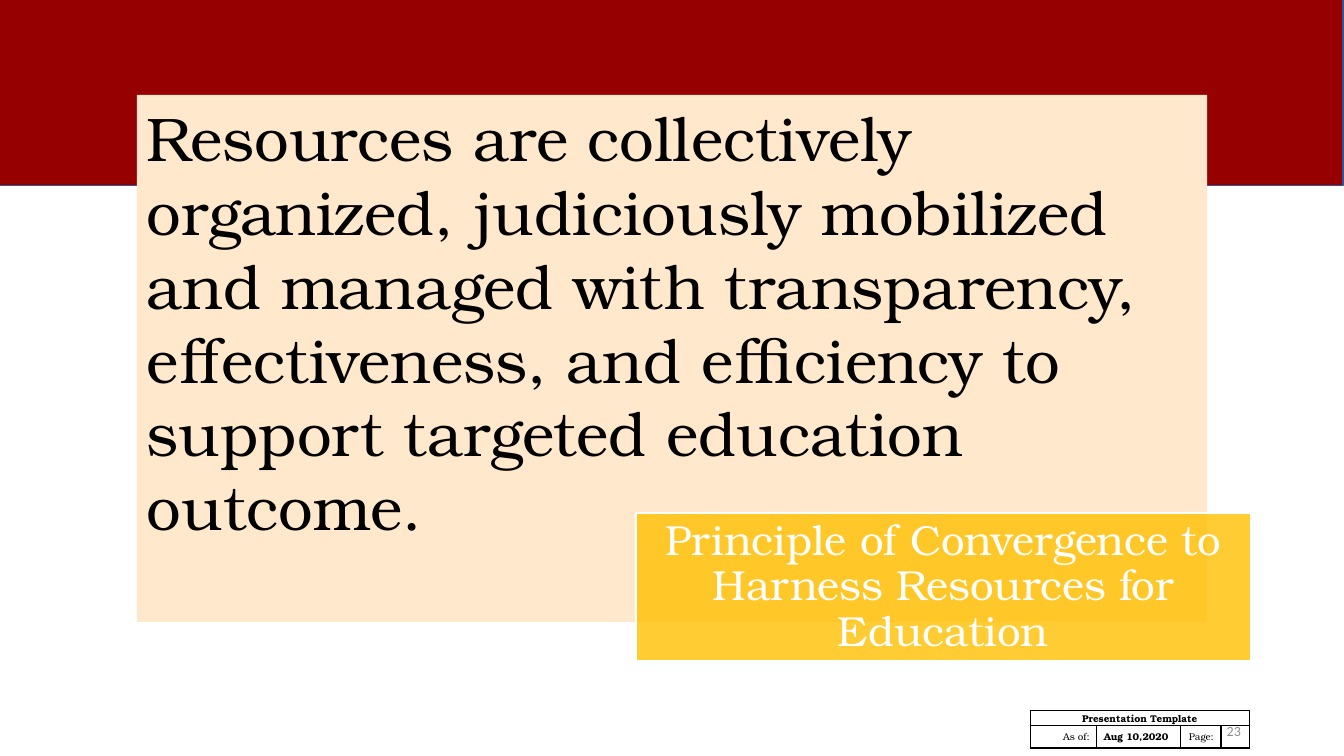
from lxml.etree import SubElement
from pptx import Presentation
from pptx.dml.color import RGBColor
from pptx.enum.shapes import MSO_SHAPE as Shape
from pptx.enum.text import MSO_ANCHOR as Anchor, PP_ALIGN as Align
from pptx.oxml import parse_xml
from pptx.oxml.ns import nsdecls, qn
from pptx.util import Cm, Pt

MAROON = RGBColor(0x96, 0x00, 0x00)
NAVY = RGBColor(0x32, 0x54, 0x91)
CREAM = RGBColor(0xFF, 0xE8, 0xCC)
GOLD = RGBColor(0xFF, 0xC0, 0x00)
GREY = RGBColor(0x8C, 0x8C, 0x8C)
BLACK = RGBColor(0x00, 0x00, 0x00)
WHITE = RGBColor(0xFF, 0xFF, 0xFF)
SERIF = "TeX Gyre Bonum"
SANS = "Calibri"


def add_span(para, text, size, color, font=SERIF, bold=False):
    span = para.add_run()
    span.text = text
    span.font.name = font
    span.font.size = Pt(size)
    span.font.bold = bold
    span.font.color.rgb = color


def add_panel(page, left, top, width, height, fill, line=None):
    panel = page.shapes.add_shape(
        Shape.RECTANGLE, Cm(left), Cm(top), Cm(width), Cm(height))
    panel.shadow.inherit = False
    panel.fill.solid()
    panel.fill.fore_color.rgb = fill
    if line is None:
        panel.line.fill.background()
    else:
        panel.line.color.rgb = line
        panel.line.width = Pt(1)
    return panel


def add_text_box(page, left, top, width, height):
    box = page.shapes.add_textbox(Cm(left), Cm(top), Cm(width), Cm(height))
    box.text_frame.word_wrap = True
    return box.text_frame


def style_cell(cell):
    """Clear the fill, tighten the margins and draw thin black borders."""
    cell.margin_left = cell.margin_right = Cm(0.18)
    cell.margin_top = cell.margin_bottom = 0
    cell.vertical_anchor = Anchor.MIDDLE
    cell.fill.background()
    properties = cell._tc.get_or_add_tcPr()
    for index, side in enumerate(("lnL", "lnR", "lnT", "lnB")):
        properties.insert(index, parse_xml(
            f'<a:{side} {nsdecls("a")} w="12700"><a:solidFill>'
            f'<a:srgbClr val="{BLACK}"/></a:solidFill></a:{side}>'))


def add_footer(page, left, top):
    """Place the document table with the page number over its last cell."""
    widths = (1.68, 2.11, 1.02, 0.71)
    heights = (0.37, 0.57)
    table = page.shapes.add_table(
        len(heights), len(widths), Cm(left), Cm(top),
        Cm(sum(widths)), Cm(sum(heights))).table
    table.first_row = table.horz_banding = False
    for column, width in zip(table.columns, widths):
        column.width = Cm(width)
    for row, height in zip(table.rows, heights):
        row.height = Cm(height)
    for cell in table.iter_cells():
        style_cell(cell)
        if cell is not None:
            para = cell.text_frame.paragraphs[0]
            SubElement(para._p, qn("a:endParaRPr")).set("sz", "700")
    table.cell(0, 0).merge(table.cell(0, len(widths) - 1))

    entries = (
        (0, 0, "Presentation Template", Align.CENTER, True),
        (1, 0, "As of:", Align.RIGHT, False),
        (1, 1, "Aug 10,2020", Align.LEFT, True),
        (1, 2, "Page:", Align.RIGHT, False),
    )
    for row, column, text, align, bold in entries:
        para = table.cell(row, column).text_frame.paragraphs[0]
        para.alignment = align
        add_span(para, text, 7, BLACK, bold=bold)

    frame = add_text_box(page, left + 4.42, top, 1.14, 1.02)
    frame.vertical_anchor = Anchor.MIDDLE
    para = frame.paragraphs[0]
    para.alignment = Align.RIGHT
    add_span(para, "23", 10, GREY, SANS)


def add_principle_label(page, left, top, width, height):
    label = add_panel(page, left, top, width, height, GOLD, WHITE)
    color = label.fill._xPr.find(qn("a:solidFill"))[0]
    SubElement(color, qn("a:alpha")).set("val", "80000")
    frame = label.text_frame
    frame.word_wrap = True
    frame.vertical_anchor = Anchor.MIDDLE
    frame.margin_left = frame.margin_right = Cm(0.15)
    frame.margin_top = frame.margin_bottom = Cm(0.15)
    para = frame.paragraphs[0]
    para.alignment = Align.CENTER
    para.line_spacing = 0.9
    add_span(para, "Principle of Convergence to Harness Resources for "
             "Education", 30, WHITE)


def add_statement(page, left, top, width, height):
    frame = add_text_box(page, left, top, width, height)
    add_span(frame.paragraphs[0],
             "Resources are collectively organized, judiciously mobilized "
             "and managed with transparency, effectiveness, and efficiency "
             "to support targeted education outcome.", 44, BLACK)


def main():
    deck = Presentation()
    deck.slide_width, deck.slide_height = Cm(33.87), Cm(19.05)
    page = deck.slides.add_slide(deck.slide_layouts[6])
    add_panel(page, -0.03, -0.15, 33.88, 4.83, MAROON, NAVY)
    add_footer(page, 25.96, 17.91)
    add_panel(page, 3.45, 2.39, 26.97, 13.28, CREAM)
    add_principle_label(page, 16.03, 12.93, 15.49, 3.73)
    add_statement(page, 3.45, 2.39, 27.03, 11.53)
    deck.save("out.pptx")


if __name__ == "__main__":
    main()
